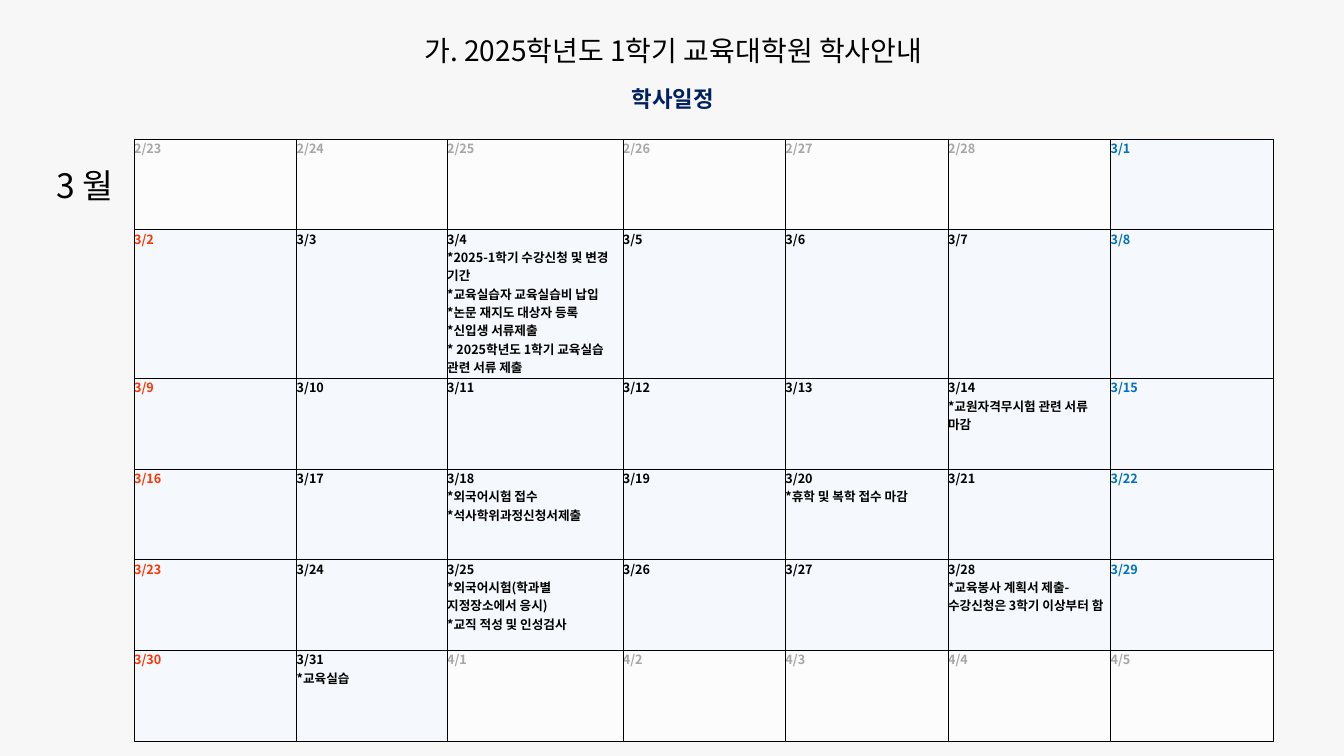
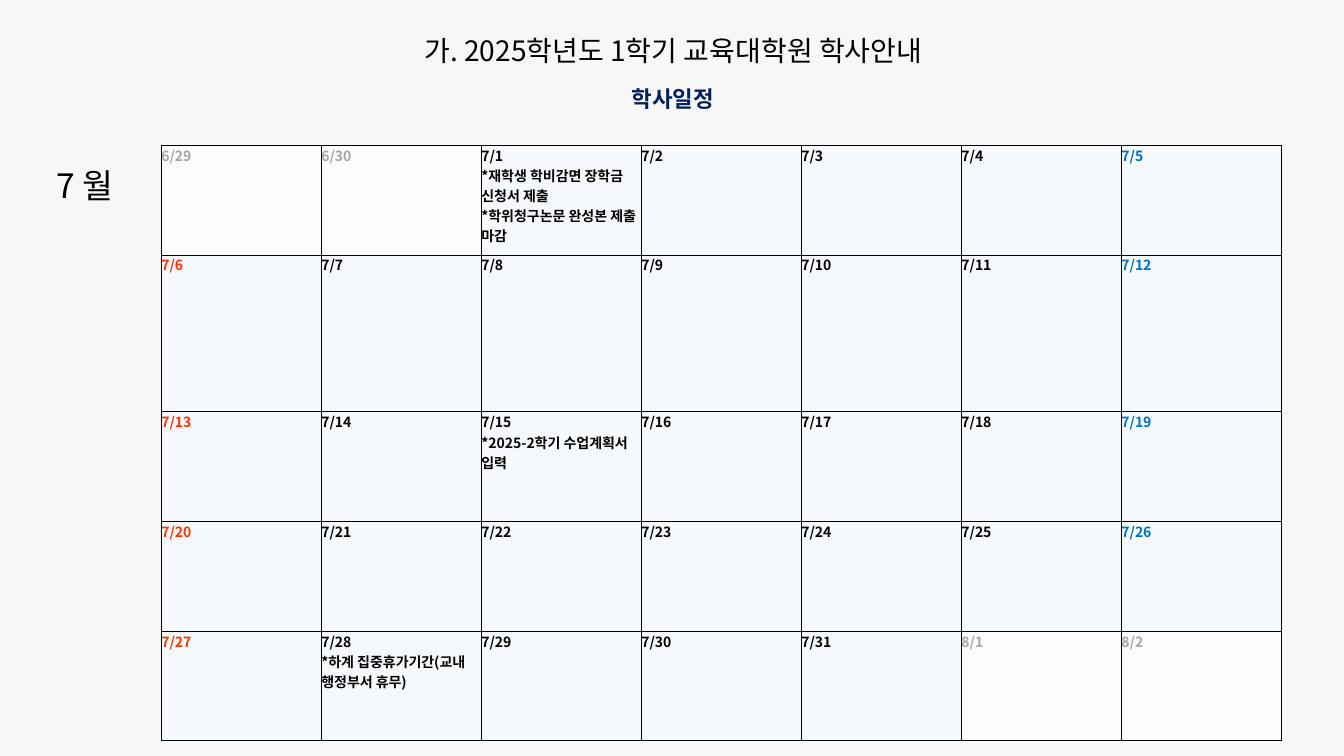
from lxml import etree
from pptx import Presentation
from pptx.dml.color import RGBColor
from pptx.enum.text import MSO_ANCHOR, MSO_AUTO_SIZE, PP_ALIGN
from pptx.oxml.ns import qn
from pptx.util import Inches, Pt

BOTTOM, FIXED = MSO_ANCHOR.BOTTOM, MSO_AUTO_SIZE.NONE
LEFT, CENTER = PP_ALIGN.LEFT, PP_ALIGN.CENTER

PAPER = RGBColor(0xF7, 0xF7, 0xF7)
BLACK = RGBColor(0, 0, 0)
NAVY = RGBColor(0x00, 0x20, 0x60)
GRAY = RGBColor(0xA6, 0xA6, 0xA6)
RED = RGBColor(0xFF, 0x33, 0x00)
BLUE = RGBColor(0x00, 0x70, 0xC0)
PALE = RGBColor(0xF5, 0xF9, 0xFD)
BLANK = RGBColor(0xFC, 0xFC, 0xFC)

FONT = "Noto Sans CJK KR"
TITLE = "가. 2025학년도 1학기 교육대학원 학사안내"
TOPIC = "학사일정"

MONTHS = [
    {
        "month": 3, "days": 31, "lead": 6, "last": 28, "size": 9,
        "box": (1.33, 1.38, 11.3, 5.97),
        "cols": [1.61, 1.49, 1.74, 1.61, 1.61, 1.61, 1.61],
        "rows": [0.9, 1.47, 0.9, 0.9, 0.9, 0.9],
        "events": {
            4: ["*2025-1학기 수강신청 및 변경 기간",
                "*교육실습자 교육실습비 납입",
                "*논문 재지도 대상자 등록",
                "*신입생 서류제출",
                "* 2025학년도 1학기 교육실습 관련 서류 제출"],
            14: ["*교원자격무시험 관련 서류 마감"],
            18: ["*외국어시험 접수", "*석사학위과정신청서제출"],
            20: ["*휴학 및 복학 접수 마감"],
            25: ["*외국어시험(학과별 지정장소에서 응시)",
                 "*교직 적성 및 인성검사"],
            28: ["*교육봉사 계획서 제출-수강신청은 3학기 이상부터 함"],
            31: ["*교육실습"],
        },
    },
    {
        "month": 7, "days": 31, "lead": 2, "last": 30, "size": 10,
        "box": (1.6, 1.44, 11.11, 5.91),
        "cols": [1] * 7,
        "rows": [1.09, 1.56, 1.09, 1.09, 1.09],
        "events": {
            1: ["*재학생 학비감면 장학금 신청서 제출",
                "*학위청구논문 완성본 제출 마감"],
            15: ["*2025-2학기 수업계획서 입력"],
            28: ["*하계 집중휴가기간(교내 행정부서 휴무)"],
        },
    },
]


def style(par, size, color, bold=False, align=LEFT):
    """Format a paragraph, for Latin and Korean letters alike."""
    par.alignment = align
    font = par.font
    font.name, font.size, font.bold = FONT, Pt(size), bold
    font.color.rgb = color
    props = par._p.get_or_add_pPr().find(qn("a:defRPr"))
    etree.SubElement(props, qn("a:ea"), typeface=FONT)


def label(shape, box, text, size, color=BLACK, bold=False):
    """Place one centred line of text in a box."""
    shape.left, shape.top, shape.width, shape.height = map(Inches, box)
    frame = shape.text_frame
    frame.text = text
    frame.word_wrap, frame.auto_size = True, FIXED
    frame.vertical_anchor = BOTTOM
    frame.margin_left = frame.margin_right = Inches(0.1)
    frame.margin_top, frame.margin_bottom = 0, Inches(0.05)
    style(frame.paragraphs[0], size, color, bold, CENTER)


def border(cell):
    """Draw thin black lines on all sides of a cell."""
    props = cell._tc.get_or_add_tcPr()
    for side in ("lnL", "lnR", "lnT", "lnB"):
        line = etree.SubElement(props, qn("a:" + side), w=str(Pt(0.5)))
        fill = etree.SubElement(line, qn("a:solidFill"))
        etree.SubElement(fill, qn("a:srgbClr"), val=str(BLACK))


def date(plan, day):
    """Return month, day and whether the day is in the shown month."""
    month = plan["month"]
    if day < 1:
        return month - 1, plan["last"] + day, False
    if day > plan["days"]:
        return month + 1, day - plan["days"], False
    return month, day, True


def fill_day(cell, plan, day, col):
    """Write one day with its events into a cell."""
    month, num, inside = date(plan, day)
    color = {0: RED, 6: BLUE}.get(col, BLACK) if inside else GRAY
    events = plan["events"].get(day, [])
    cell.margin_left = cell.margin_right = cell.margin_top = 0
    cell.margin_bottom = Inches(0.02)
    border(cell)
    cell.fill.solid()
    cell.fill.fore_color.rgb = PALE if inside else BLANK
    cell.text_frame.text = "\n".join([f"{month}/{num}", *events])
    for par in cell.text_frame.paragraphs:
        style(par, plan["size"], color, bold=True)


def calendar(slide, plan):
    """Draw the month grid, sharing its box among columns and rows."""
    left, top, width, height = plan["box"]
    cols, rows = plan["cols"], plan["rows"]
    table = slide.shapes.add_table(
        len(rows), len(cols), *map(Inches, plan["box"])).table
    table.first_row = table.horz_banding = False
    for col, part in zip(table.columns, cols):
        col.width = Inches(width * part / sum(cols))
    for row, part in zip(table.rows, rows):
        row.height = Inches(height * part / sum(rows))
    for r in range(len(rows)):
        for c in range(len(cols)):
            day = r * len(cols) + c + 1 - plan["lead"]
            fill_day(table.cell(r, c), plan, day, c)


def month_slide(deck, plan):
    """Add a slide with headings, month name and calendar."""
    slide = deck.slides.add_slide(deck.slide_layouts[5])
    shapes = slide.shapes
    label(shapes.title, (3.77, 0.28, 5.82, 0.44), TITLE, 20)
    label(shapes.add_textbox(0, 0, 0, 0), (3.99, 0.79, 5.37, 0.37),
          TOPIC, 16, NAVY, True)
    label(shapes.add_textbox(0, 0, 0, 0), (0.35, 1.59, 0.98, 0.5),
          f"{plan['month']} 월", 24)
    calendar(slide, plan)


def main():
    """Build and save the deck."""
    deck = Presentation()
    deck.slide_width, deck.slide_height = Inches(13.33), Inches(7.5)
    back = deck.slide_master.background.fill
    back.solid()
    back.fore_color.rgb = PAPER
    for plan in MONTHS:
        month_slide(deck, plan)
    deck.save("out.pptx")


if __name__ == "__main__":
    main()
